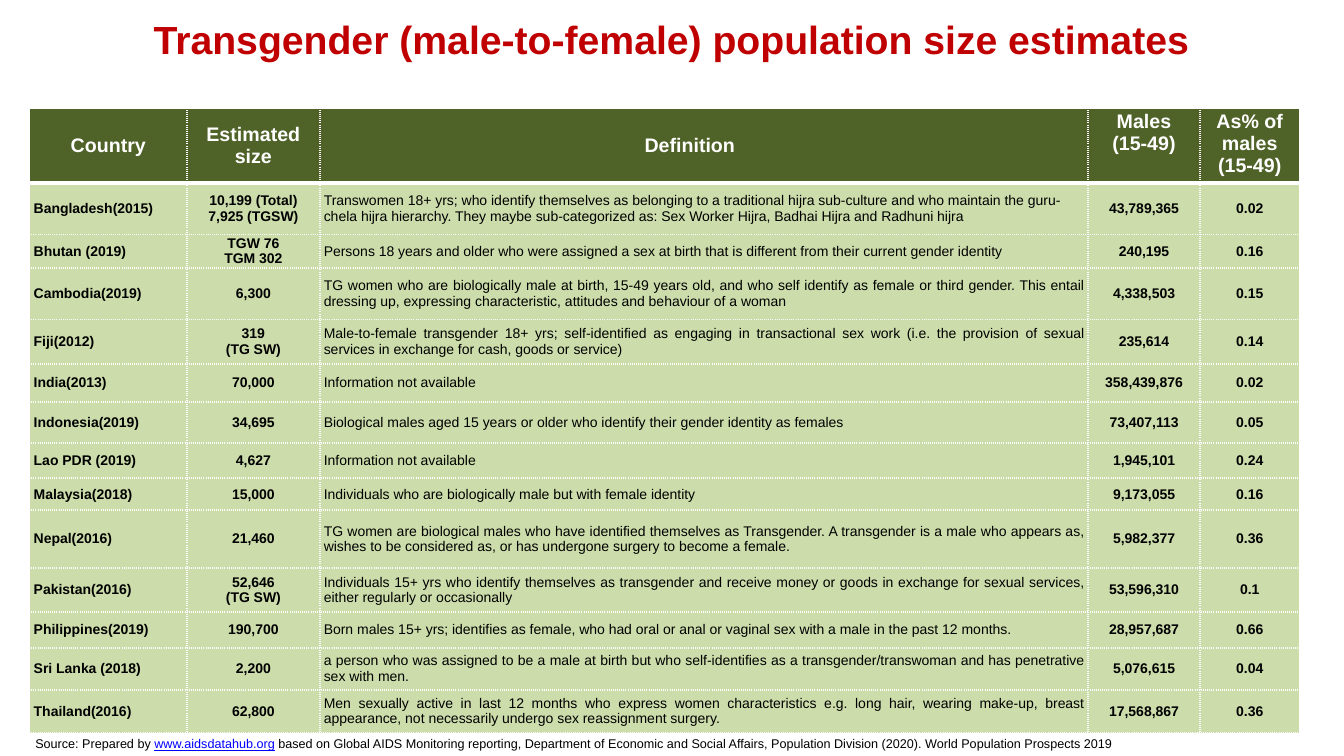
import pptx
import pptx.dml.color
import pptx.enum.text
import pptx.oxml
import pptx.oxml.ns
import pptx.util

Cm = pptx.util.Cm
ALIGN = pptx.enum.text.PP_ALIGN
MIDDLE = pptx.enum.text.MSO_ANCHOR.MIDDLE
TOP = pptx.enum.text.MSO_ANCHOR.TOP

HEADERS = ["Country", "Estimated size", "Definition", "Males\n(15-49)", "As% of males\n(15-49)"]
COLUMN_WIDTHS = [3.96, 3.35, 19.35, 2.84, 2.49]
HEADER_HEIGHT = 1.88
ESTIMATES = [
    (1.3, "Bangladesh(2015)", "10,199 (Total)\n7,925 (TGSW)",
     "Transwomen 18+ yrs; who identify themselves as belonging to a traditional hijra sub-culture and who "
     "maintain the guru-chela hijra hierarchy. They maybe sub-categorized as: Sex Worker Hijra, "
     "Badhai Hijra and Radhuni hijra", "43,789,365", "0.02"),
    (0.84, "Bhutan (2019)", "TGW 76\nTGM 302",
     "Persons 18 years and older who were assigned a sex at birth that is different from their "
     "current gender identity", "240,195", "0.16"),
    (1.3, "Cambodia(2019)", "6,300",
     "TG women who are biologically male at birth, 15-49 years old, and who self identify as female or "
     "third gender. This entail dressing up, expressing characteristic, attitudes and behaviour of a woman",
     "4,338,503", "0.15"),
    (1.12, "Fiji(2012)", "319\n(TG SW)",
     "Male-to-female transgender 18+ yrs; self-identified as engaging in transactional sex work "
     "(i.e. the provision of sexual services in exchange for cash, goods or service)", "235,614", "0.14"),
    (0.97, "India(2013)", "70,000", "Information not available", "358,439,876", "0.02"),
    (1.02, "Indonesia(2019)", "34,695",
     "Biological males aged 15 years or older who identify their gender identity as females",
     "73,407,113", "0.05"),
    (0.89, "Lao PDR (2019)", "4,627", "Information not available", "1,945,101", "0.24"),
    (0.81, "Malaysia(2018)", "15,000", "Individuals who are biologically male but with female identity",
     "9,173,055", "0.16"),
    (1.45, "Nepal(2016)", "21,460",
     "TG women are biological males who have identified themselves as Transgender. A transgender is a male "
     "who appears as, wishes to be considered as, or has undergone surgery to become a female.",
     "5,982,377", "0.36"),
    (1.12, "Pakistan(2016)", "52,646\n(TG SW)",
     "Individuals 15+ yrs who identify themselves as transgender and receive money or goods in exchange "
     "for sexual services, either regularly or occasionally", "53,596,310", "0.1"),
    (0.89, "Philippines(2019)", "190,700",
     "Born males 15+ yrs; identifies as female, who had oral or anal or vaginal sex with a male in the "
     "past 12 months.", "28,957,687", "0.66"),
    (1.07, "Sri Lanka (2018)", "2,200",
     "a person who was assigned to be a male at birth but who self-identifies as a transgender/transwoman "
     "and has penetrative sex with men.", "5,076,615", "0.04"),
    (1.07, "Thailand(2016)", "62,800",
     "Men sexually active in last 12 months who express women characteristics e.g. long hair, wearing "
     "make-up, breast appearance, not necessarily undergo sex reassignment surgery.", "17,568,867", "0.36"),
]
SOURCE = [
    ("Source: Prepared by ", "000000", False),
    ("www.aidsdatahub.org", "0000FF", True),
    (" based on Global AIDS Monitoring reporting, Department of Economic and Social Affairs, "
     "Population Division (2020). World Population Prospects 2019", "000000", False),
]


def rgb(value):
    """Turn a hex string into a colour."""
    return pptx.dml.color.RGBColor.from_string(value)


def set_font(font, size, color, bold=False):
    """Give a font its face, size, colour and weight."""
    font.name = "Arial"
    font.size = pptx.util.Pt(size)
    font.bold = bold
    font.color.rgb = rgb(color)


def set_borders(cell, sides):
    """Draw white borders from (width in points, dash) for left, right, top and bottom."""
    properties = cell._tc.get_or_add_tcPr()
    for position, (side, (width, dash)) in enumerate(zip("LRTB", sides)):
        border = pptx.oxml.parse_xml(
            f'<a:ln{side} {pptx.oxml.ns.nsdecls("a")} w="{pptx.util.Pt(width)}">'
            '<a:solidFill><a:srgbClr val="FFFFFF"/></a:solidFill>'
            f'<a:prstDash val="{dash}"/></a:ln{side}>')
        properties.insert(position, border)


def fill_cell(cell, text, fill, margins, align, size, color, bold):
    """Write and format one table cell."""
    cell.fill.solid()
    cell.fill.fore_color.rgb = rgb(fill)
    cell.vertical_anchor = MIDDLE
    cell.margin_left, cell.margin_right, cell.margin_top, cell.margin_bottom = map(Cm, margins)
    cell.text = text
    for para in cell.text_frame.paragraphs:
        para.alignment = align
        set_font(para.font, size, color, bold)


def add_title(slide, text):
    """Place and format the title."""
    title = slide.shapes.title
    title.left, title.top, title.width, title.height = Cm(0), Cm(0.18), Cm(33.83), Cm(1.73)
    title.text_frame.text = text
    title.text_frame.vertical_anchor = MIDDLE
    para = title.text_frame.paragraphs[0]
    para.alignment = ALIGN.CENTER
    para.line_spacing = 0.9
    set_font(para.font, 28, "C00000", True)


def add_estimates(slide):
    """Add the table of estimates by country."""
    heights = [HEADER_HEIGHT] + [estimate[0] for estimate in ESTIMATES]
    table = slide.shapes.add_table(
        len(heights), len(HEADERS), Cm(0.75), Cm(2.73), Cm(sum(COLUMN_WIDTHS)), Cm(sum(heights))).table
    table.first_row = table.horz_banding = False
    for column, width in zip(table.columns, COLUMN_WIDTHS):
        column.width = Cm(width)
    for row, height in zip(table.rows, heights):
        row.height = Cm(height)

    for column, text in enumerate(HEADERS):
        cell = table.cell(0, column)
        right = 0.8 if text == "Definition" else 0.1
        fill_cell(cell, text, "4F6228", (0.1, right, 0.05, 0.05), ALIGN.CENTER, 14, "FFFFFF", True)
        if column > 2:
            cell.vertical_anchor = TOP

    for row, (_, *texts) in enumerate(ESTIMATES, 1):
        for column, text in enumerate(texts):
            align, margins = ALIGN.CENTER, (0, 0, 0, 0)
            if column == 0:
                align, margins = ALIGN.LEFT, (0.1, 0, 0, 0)
            elif column == 2:
                align = ALIGN.LEFT if row == 1 else ALIGN.JUSTIFY
                margins = (0.1, 0.1, 0.05, 0.05)
            fill_cell(table.cell(row, column), text, "CCDDAB", margins, align, 10, "000000", column != 2)

    dotted, edge, rule = (1.5, "sysDot"), (1, "solid"), (3, "solid")
    for row in range(len(heights)):
        for column in range(len(HEADERS)):
            set_borders(table.cell(row, column), (
                edge if column == 0 else dotted,
                edge if column == len(HEADERS) - 1 else dotted,
                edge if row == 0 else rule if row == 1 else dotted,
                rule if row == 0 else dotted))


def add_source(slide):
    """Add the source line under the table."""
    box = slide.shapes.add_textbox(Cm(0.64), Cm(18.42), Cm(33.12), Cm(0.63))
    box.text_frame.word_wrap = True
    para = box.text_frame.paragraphs[0]
    for text, color, underline in SOURCE:
        span = para.add_run()
        span.text = text
        set_font(span.font, 9, color)
        span.font.underline = underline


def main():
    """Build the deck."""
    deck = pptx.Presentation()
    deck.slide_width, deck.slide_height = Cm(33.87), Cm(19.05)
    slide = deck.slides.add_slide(deck.slide_layouts[5])
    add_title(slide, "Transgender (male-to-female) population size estimates")
    add_estimates(slide)
    add_source(slide)
    deck.save("out.pptx")


if __name__ == "__main__":
    main()
